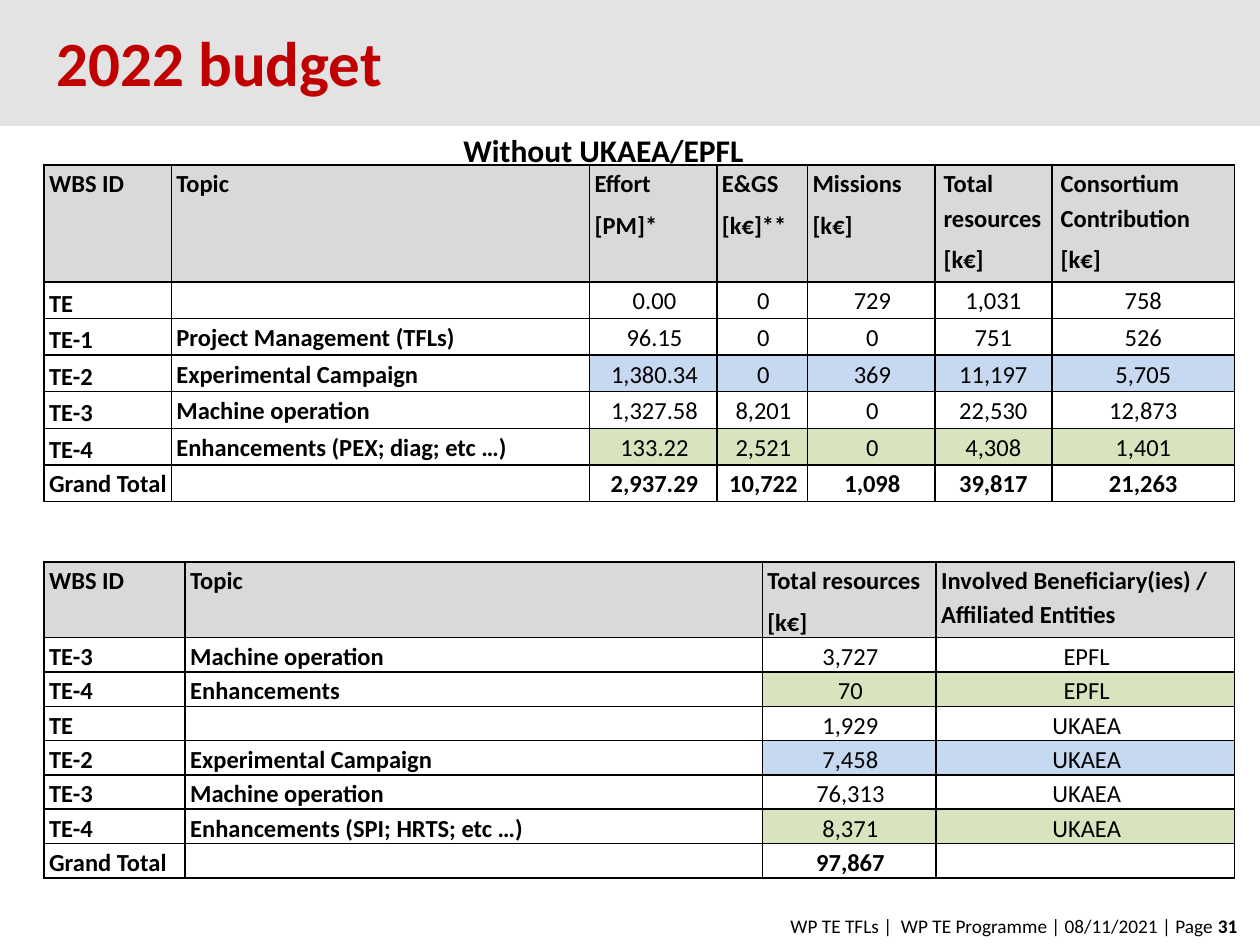
from lxml import etree
from pptx import Presentation
from pptx.dml.color import RGBColor
from pptx.enum.shapes import MSO_SHAPE
from pptx.enum.text import MSO_ANCHOR, PP_ALIGN
from pptx.oxml.ns import qn
from pptx.util import Inches, Pt

RECTANGLE = MSO_SHAPE.RECTANGLE
TOP, MIDDLE, BOTTOM = MSO_ANCHOR.TOP, MSO_ANCHOR.MIDDLE, MSO_ANCHOR.BOTTOM
LEFT, CENTER, RIGHT = PP_ALIGN.LEFT, PP_ALIGN.CENTER, PP_ALIGN.RIGHT

BLACK = RGBColor(0x00, 0x00, 0x00)
RED = RGBColor(0xC0, 0x00, 0x00)
BAND_GREY = RGBColor(0xE3, 0xE3, 0xE3)
HEADER_GREY = RGBColor(0xD9, 0xD9, 0xD9)
BLUE = RGBColor(0xC6, 0xD9, 0xF1)
GREEN = RGBColor(0xD7, 0xE4, 0xBD)

TABLE_LEFT = Inches(0.35)

# Each budget: top, column widths, header height, row height,
# first column with wide margins, rows, colour of row
BUDGETS = [
    (1.31, [1.01, 3.32, 1.01, 0.72, 1.01, 0.93, 1.45], 0.93, 0.29, 5, [
        ["WBS ID", "Topic", "Effort\n[PM]*", "E&GS\n[k€]**", "Missions\n[k€]",
         "Total resources\n[k€]", "Consortium Contribution\n[k€]"],
        ["TE", "", "0.00", "0", "729", "1,031", "758"],
        ["TE-1", "Project Management (TFLs)", "96.15", "0", "0", "751", "526"],
        ["TE-2", "Experimental Campaign", "1,380.34", "0", "369", "11,197", "5,705"],
        ["TE-3", "Machine operation", "1,327.58", "8,201", "0", "22,530", "12,873"],
        ["TE-4", "Enhancements (PEX; diag; etc …)", "133.22", "2,521", "0",
         "4,308", "1,401"],
        ["Grand Total", "", "2,937.29", "10,722", "1,098", "39,817", "21,263"],
    ]),
    (4.46, [1.12, 4.58, 1.38, 2.37], 0.59, 0.27, 4, [
        ["WBS ID", "Topic", "Total resources\n[k€]",
         "Involved Beneficiary(ies) / Affiliated Entities"],
        ["TE-3", "Machine operation", "3,727", "EPFL"],
        ["TE-4", "Enhancements", "70", "EPFL"],
        ["TE", "", "1,929", "UKAEA"],
        ["TE-2", "Experimental Campaign", "7,458", "UKAEA"],
        ["TE-3", "Machine operation", "76,313", "UKAEA"],
        ["TE-4", "Enhancements (SPI; HRTS; etc …)", "8,371", "UKAEA"],
        ["Grand Total", "", "97,867", ""],
    ]),
]
ROW_FILLS = {"WBS ID": HEADER_GREY, "TE-2": BLUE, "TE-4": GREEN}


def style(paragraph, size, color=BLACK, bold=True, align=LEFT):
    paragraph.alignment = align
    font = paragraph.font
    font.name, font.size, font.bold = "Calibri", Pt(size), bold
    font.color.rgb = color


def add_borders(cell):
    properties = cell._tc.get_or_add_tcPr()
    for side in ("lnL", "lnR", "lnT", "lnB"):
        line = etree.SubElement(properties, qn(f"a:{side}"), w=str(Pt(1)))
        solid = etree.SubElement(line, qn("a:solidFill"))
        etree.SubElement(solid, qn("a:srgbClr"), val=str(BLACK))


prs = Presentation()
prs.slide_width, prs.slide_height = Inches(10), Inches(7.5)
slide = prs.slides.add_slide(prs.slide_layouts[5])

# Title on its grey band
title = slide.shapes.title
band = slide.shapes.add_shape(RECTANGLE, 0, 0, prs.slide_width, Inches(1))
band.shadow.inherit = False
band.fill.solid()
band.fill.fore_color.rgb = BAND_GREY
band.line.fill.background()
title._element.addprevious(band._element)

title.left, title.top = TABLE_LEFT, Inches(0.13)
title.width, title.height = Inches(8.03), Inches(0.71)
title.text_frame.text = "2022 budget"
title.text_frame.vertical_anchor = MIDDLE
style(title.text_frame.paragraphs[0], 36, RED)

# Budget tables
for top, widths, header_height, row_height, wide_from, rows in BUDGETS:
    heights = [header_height] + [row_height] * (len(rows) - 1)
    budget = slide.shapes.add_table(
        len(rows), len(widths), TABLE_LEFT, Inches(top),
        Inches(sum(widths)), Inches(sum(heights))).table
    budget.first_row = budget.horz_banding = False
    for column, width in zip(budget.columns, widths):
        column.width = Inches(width)
    for r, (row, height) in enumerate(zip(rows, heights)):
        budget.rows[r].height = Inches(height)
        is_header, is_total = r == 0, row[0] == "Grand Total"
        for c, text in enumerate(row):
            cell = budget.cell(r, c)
            is_label = is_header or c < 2
            wide = c >= wide_from
            cell.margin_left = Inches(0.07 if wide else 0.04)
            cell.margin_right = Inches(0.07 if wide else 0.02)
            cell.margin_top = cell.margin_bottom = 0
            id_cell = c == 0 and not is_header and not is_total
            cell.vertical_anchor = BOTTOM if id_cell else TOP
            add_borders(cell)
            if row[0] in ROW_FILLS and (is_header or c >= 2):
                cell.fill.solid()
                cell.fill.fore_color.rgb = ROW_FILLS[row[0]]
            else:
                cell.fill.background()
            cell.text_frame.text = text
            for p, paragraph in enumerate(cell.text_frame.paragraphs):
                paragraph.line_spacing = 1.15
                paragraph.space_before = Pt(2 if p else 0)
                paragraph.space_after = Pt(2 if is_header or c == 1 else 6)
                style(paragraph, 14, bold=is_label or is_total,
                      align=LEFT if is_label else CENTER)

# Table heading and footer
heading = slide.shapes.add_textbox(Inches(3.58), Inches(0.99), Inches(5.04), Inches(0.4))
heading.text_frame.word_wrap = True
heading.text_frame.text = "Without UKAEA/EPFL"
style(heading.text_frame.paragraphs[0], 18)

footer = slide.shapes.add_textbox(Inches(0.91), Inches(7.21), Inches(9.01), Inches(0.29))
footer.text_frame.word_wrap = True
footer_line = footer.text_frame.paragraphs[0]
footer_line.add_run().text = "WP TE TFLs |  WP TE Programme | 08/11/2021 | Page "
page = footer_line.add_run()
page.text = "31"
page.font.bold = True
style(footer_line, 11, bold=False, align=RIGHT)

prs.save("out.pptx")
